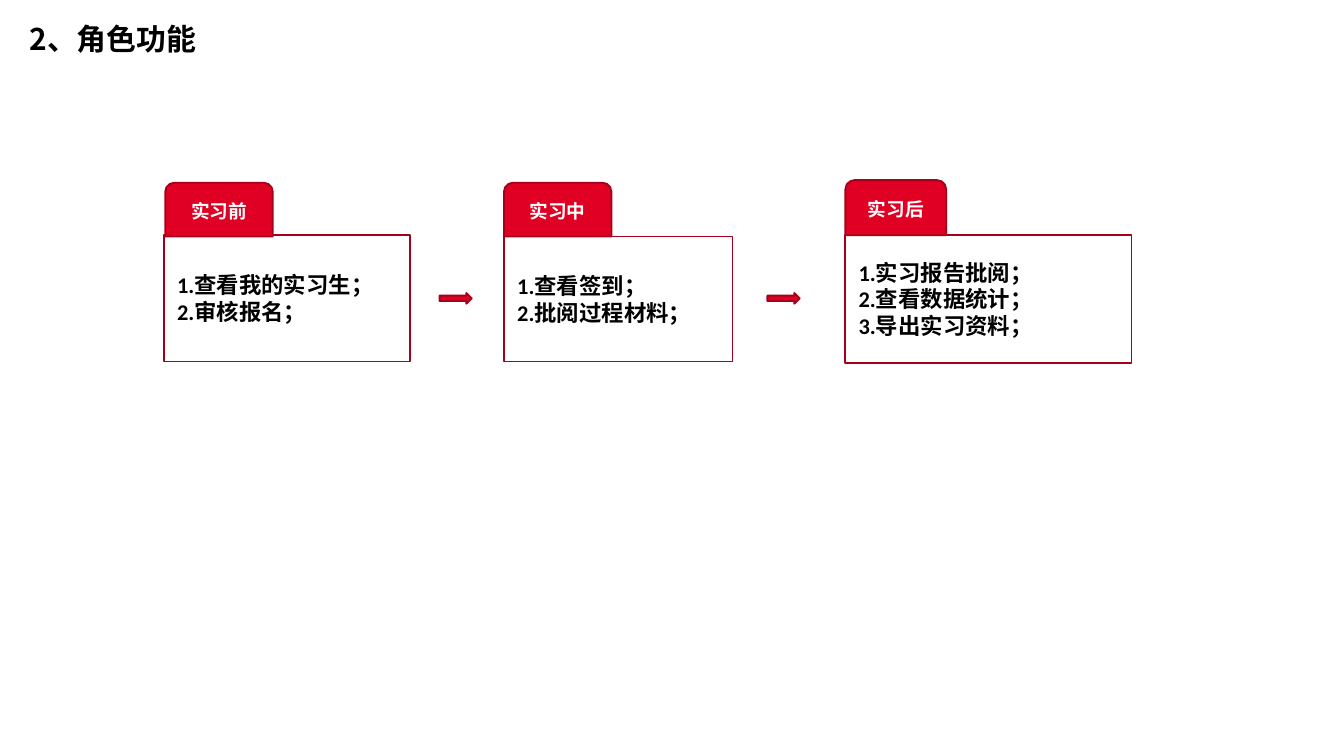
import pptx
import pptx.dml.color
import pptx.enum.shapes
import pptx.enum.text
import pptx.util
from lxml import etree
from pptx.oxml.ns import qn

Inches = pptx.util.Inches
SHAPES = pptx.enum.shapes.MSO_SHAPE
ALIGN = pptx.enum.text.PP_ALIGN
ANCHOR = pptx.enum.text.MSO_ANCHOR

SLIDE_WIDTH = 10
SLIDE_HEIGHT = SLIDE_WIDTH * 9 / 16

COLORS = {"red": "DF0024", "border": "A7001B", "white": "FFFFFF", "black": "000000"}
LATIN, CJK = "Calibri", "Noto Sans CJK SC"

TITLE_FONT = {"name": CJK, "size": pptx.util.Pt(16), "bold": True}
TAB_FONT = {"name": CJK, "size": pptx.util.Pt(10), "bold": True}
TASK_FONT = {"name": LATIN, "size": pptx.util.Pt(12), "bold": True}

# Tab label, tab box, task box shape, task box, tasks
STAGES = [
    ("实习前", (1.23, 1.36, 0.8, 0.4), SHAPES.RECTANGLE, (1.22, 1.75, 1.83, 0.94),
     ["查看我的实习生", "审核报名"]),
    ("实习中", (3.75, 1.36, 0.8, 0.4), SHAPES.FLOWCHART_PROCESS, (3.75, 1.76, 1.7, 0.93),
     ["查看签到", "批阅过程材料"]),
    ("实习后", (6.29, 1.34, 0.75, 0.41), SHAPES.RECTANGLE, (6.29, 1.75, 2.13, 0.95),
     ["实习报告批阅", "查看数据统计", "导出实习资料"]),
]
ARROWS = [(left, 2.18, 0.24, 0.08) for left in (3.27, 5.71)]


def rgb(color):
    return pptx.dml.color.RGBColor.from_string(COLORS[color])


def write_lines(frame, lines, font_format, color, align, anchor):
    frame.word_wrap = True
    frame.vertical_anchor = anchor
    frame.text = "\n".join(lines)
    for paragraph in frame.paragraphs:
        paragraph.alignment = align
        for run in paragraph.runs:
            for attribute, value in font_format.items():
                setattr(run.font, attribute, value)
            run.font.color.rgb = rgb(color)
            east_asian = etree.SubElement(run.font._element, qn("a:ea"))
            east_asian.set("typeface", CJK)


def add_bordered(slide, preset, box, fill):
    shape = slide.shapes.add_shape(preset, *map(Inches, box))
    shape.shadow.inherit = False
    shape.fill.solid()
    shape.fill.fore_color.rgb = rgb(fill)
    shape.line.color.rgb = rgb("border")
    shape.line.width = pptx.util.Pt(1)
    return shape


def add_title(slide, box):
    title = slide.shapes.title
    for side, length in zip(("left", "top", "width", "height"), box):
        setattr(title, side, Inches(length))
    write_lines(title.text_frame, ["2、角色功能"], TITLE_FONT, "black", ALIGN.LEFT, ANCHOR.TOP)
    title.text_frame.auto_size = pptx.enum.text.MSO_AUTO_SIZE.SHAPE_TO_FIT_TEXT


def add_stage(slide, label, tab_box, preset, task_box, tasks):
    """Draw a task list with its labelled tab on top."""
    task_list = add_bordered(slide, preset, task_box, "white")
    lines = [f"{number}.{task}；" for number, task in enumerate(tasks, 1)]
    write_lines(task_list.text_frame, lines, TASK_FONT, "black", ALIGN.LEFT, ANCHOR.MIDDLE)
    tab = add_bordered(slide, SHAPES.ROUND_2_SAME_RECTANGLE, tab_box, "red")
    write_lines(tab.text_frame, [label], TAB_FONT, "white", ALIGN.CENTER, ANCHOR.MIDDLE)


def main():
    deck = pptx.Presentation()
    deck.slide_width, deck.slide_height = Inches(SLIDE_WIDTH), Inches(SLIDE_HEIGHT)
    slide = deck.slides.add_slide(deck.slide_layouts.get_by_name("Title Only"))
    add_title(slide, (0.12, 0.1, 3.17, 0.37))
    for stage in STAGES:
        add_stage(slide, *stage)
    for arrow_box in ARROWS:
        add_bordered(slide, SHAPES.RIGHT_ARROW, arrow_box, "red")
    deck.save("out.pptx")


if __name__ == "__main__":
    main()
